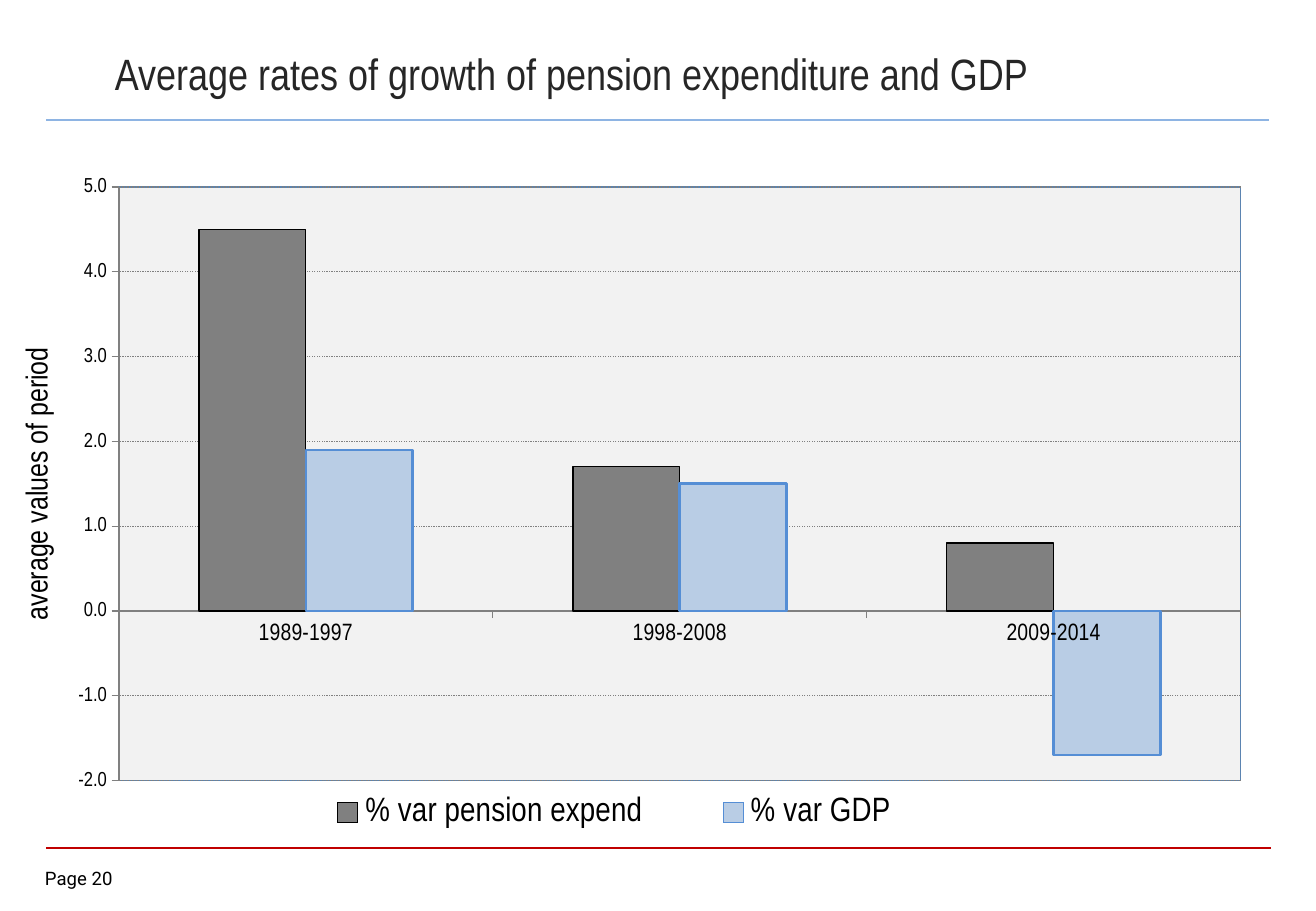
from dataclasses import dataclass

from lxml import etree
from pptx import Presentation, util as u
from pptx.chart.data import CategoryChartData
from pptx.dml.color import RGBColor
from pptx.enum import chart as ch, dml, shapes, text
from pptx.oxml import parse_xml
from pptx.oxml.ns import nsdecls, qn

HUES = {
    "black": "000000", "title": "262626", "red": "C00000", "rule": "8EB4E3",
    "grey": "808080", "pale": "F2F2F2", "sky": "B9CDE5", "blue": "558ED5",
    "frame": "5B84B1",
}
NARROW = "Arial Narrow"


@dataclass
class Rule:
    end: float
    top: float
    hue: str
    width: float


@dataclass
class Bars:
    name: str
    vals: tuple
    fill: str
    edge: str
    width: float


RULES = [Rule(10.46, 6.98, "red", 1), Rule(10.44, 0.99, "rule", 1.5)]
SPANS = ["1989-1997", "1998-2008", "2009-2014"]
BARS = [
    Bars("% var pension expend", (4.5, 1.7, 0.8), "grey", "black", 0.75),
    Bars("% var GDP", (1.9, 1.5, -1.7), "sky", "blue", 1.5),
]


def hue(name: str) -> RGBColor:
    return RGBColor.from_string(HUES[name])


def style(font, size: float, face: str = NARROW, tint: str = "black") -> None:
    font.size, font.name, font.bold = u.Pt(size), face, False
    font.color.rgb = hue(tint)


def write(frame, words: str, size: float, face: str = NARROW,
          tint: str = "black", align=None) -> None:
    para = frame.paragraphs[0]
    para.alignment = align
    run = para.add_run()
    run.text = words
    style(run.font, size, face, tint)


def stroke(line, tint: str, width: float) -> None:
    line.color.rgb = hue(tint)
    line.width = u.Pt(width)


def draw_rule(slide, rule: Rule) -> None:
    line = slide.shapes.add_connector(
        shapes.MSO_CONNECTOR.STRAIGHT, u.Inches(0.38), u.Inches(rule.top),
        u.Inches(rule.end), u.Inches(rule.top))
    stroke(line.line, rule.hue, rule.width)
    etree.SubElement(line._element.spPr, qn("a:effectLst"))


def layout(x: float, y: float, w: float, h: float, inner: bool = False):
    target = '<c:layoutTarget val="inner"/>' if inner else ""
    parts = "".join(f'<c:{k}Mode val="edge"/>' for k in "xy")
    sizes = "".join(f'<c:{k} val="{v}"/>' for k, v in zip("xywh", (x, y, w, h)))
    return parse_xml(f'<c:layout {nsdecls("c")}><c:manualLayout>{target}{parts}'
                     f'{sizes}</c:manualLayout></c:layout>')


def set_axes(chart) -> None:
    for axis, size in ((chart.category_axis, 14), (chart.value_axis, 12)):
        style(axis.tick_labels.font, size)
        stroke(axis.format.line, "grey", 0.75)
        axis.major_tick_mark = ch.XL_TICK_MARK.OUTSIDE
        axis.minor_tick_mark = ch.XL_TICK_MARK.NONE
    axis = chart.value_axis
    axis.minimum_scale, axis.maximum_scale, axis.major_unit = -2, 5, 1
    axis.tick_labels.number_format = "#,##0.0"
    axis.tick_labels.number_format_is_linked = False
    axis.has_major_gridlines = True
    grid = axis.major_gridlines.format.line
    stroke(grid, "grey", 0.75)
    grid.dash_style = dml.MSO_LINE.ROUND_DOT
    frame = axis.axis_title.text_frame
    write(frame, "average values of period", 18)
    frame._txBody.bodyPr.set("rot", "-5400000")
    frame._txBody.bodyPr.set("vert", "horz")


def set_plot(chart) -> None:
    area = chart._chartSpace.chart.plotArea
    for old in area.findall(qn("c:layout")):
        area.remove(old)
    area.insert(0, layout(0.081, 0.053, 0.892, 0.837, inner=True))
    area.append(parse_xml(
        f'<c:spPr {nsdecls("c", "a")}><a:solidFill><a:srgbClr val="{HUES["pale"]}"/>'
        f'</a:solidFill><a:ln w="9525"><a:solidFill><a:srgbClr val="{HUES["frame"]}"/>'
        '</a:solidFill></a:ln></c:spPr>'))


def set_key(chart) -> None:
    chart.has_legend = True
    key = chart.legend
    key.position = ch.XL_LEGEND_POSITION.RIGHT
    key.include_in_layout = False
    style(key.font, 20)
    key._element.find(qn("c:legendPos")).addnext(layout(0.2, 0.9, 0.55, 0.07))


def draw_chart(slide) -> None:
    data = CategoryChartData(number_format="#,##0.0")
    data.categories = SPANS
    for bars in BARS:
        data.add_series(bars.name, bars.vals)
    chart = slide.shapes.add_chart(
        ch.XL_CHART_TYPE.COLUMN_CLUSTERED, u.Inches(0.14), u.Inches(1.23),
        u.Inches(10.35), u.Inches(5.84), data).chart
    chart.has_title = False
    style(chart.font, 10, "Calibri")
    plot = chart.plots[0]
    plot.gap_width, plot.overlap, plot.vary_by_categories = 150, 0, False
    for series, bars in zip(plot.series, BARS):
        series.invert_if_negative = False
        series.format.fill.solid()
        series.format.fill.fore_color.rgb = hue(bars.fill)
        stroke(series.format.line, bars.edge, bars.width)
    set_axes(chart)
    set_plot(chart)
    set_key(chart)


def place(shape, x: float, y: float, w: float, h: float) -> None:
    shape.left, shape.top = u.Inches(x), u.Inches(y)
    shape.width, shape.height = u.Inches(w), u.Inches(h)


def main() -> None:
    deck = Presentation()
    deck.slide_width, deck.slide_height = u.Inches(10.83), u.Inches(7.5)
    slide = deck.slides.add_slide(deck.slide_layouts[5])

    # Rules and page number
    for rule in RULES:
        draw_rule(slide, rule)
    page = slide.shapes.add_textbox(0, 0, 0, 0)
    place(page, 0.37, 7.14, 0.73, 0.22)
    frame = page.text_frame
    frame.margin_left = frame.margin_right = 0
    frame.margin_top = frame.margin_bottom = 0
    write(frame, "Page 20", 11, face="Roboto")

    # Title
    title = slide.shapes.title
    place(title, 0.3, 0.29, 8.82, 0.62)
    title.text_frame.vertical_anchor = text.MSO_ANCHOR.MIDDLE
    write(title.text_frame, "Average rates of growth of pension expenditure and GDP",
          26, tint="title", align=text.PP_ALIGN.CENTER)

    # Growth chart
    draw_chart(slide)
    deck.save("out.pptx")


if __name__ == "__main__":
    main()
